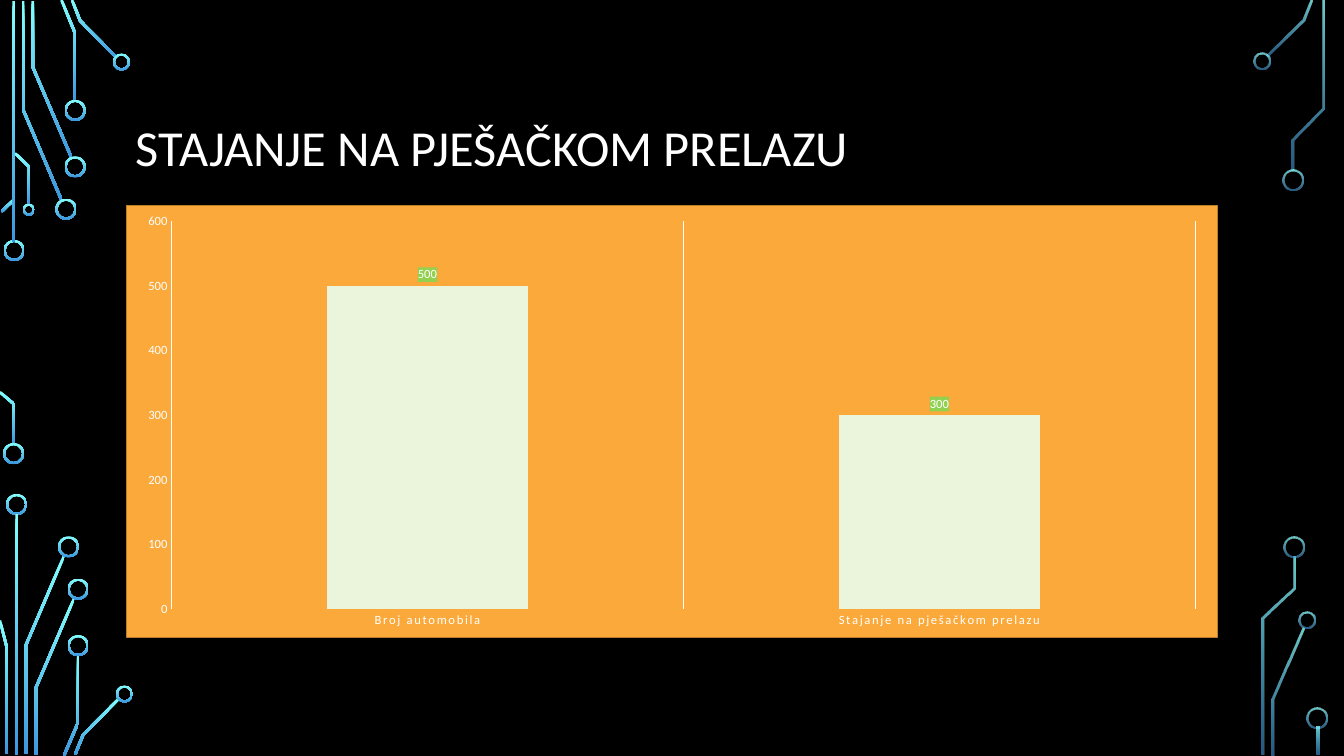
import math
import lxml.etree
import pptx
import pptx.chart.data
import pptx.dml.color
import pptx.enum.chart
import pptx.enum.shapes
import pptx.enum.text
import pptx.oxml
import pptx.oxml.ns
import pptx.util

COLUMNS, ROWS = 1333, 750
TRACE_WIDTH, RING_WIDTH = 2.6, 2
FONT, WHITE = "Calibri", "FFFFFF"
SOLID, FADED = (100, 100), (80, 60)

LEFT_TRACES = [
    [(23, 1), (23, 109), (61, 198.5)],
    [(32.5, 1), (32.5, 66.5), (71, 156.5)],
    [(61, 0), (74.5, 33), (74.5, 100)],
    [(71.5, 0), (79.5, 20.5), (115.5, 57)],
    [(1.5, 210), (14, 198)],
    [(0, 389), (14, 401), (14, 441)],
    [(15, 152), (29, 165.5), (29, 203)],
    [(25.5, 748), (25.5, 640.5), (63.5, 551.5)],
    [(0, 615.5), (6.5, 641), (6.5, 748)],
    [(35.5, 749), (35.5, 682.5), (73.5, 593.5)],
    [(63.5, 749.5), (77.5, 717), (77.5, 650)],
    [(74.5, 748.5), (82.5, 729), (118, 693)],
]
RIGHT_TRACES = [
    [(1300.5, 0), (1292.5, 20), (1257, 55.5)],
    [(1262.5, 749), (1262.5, 693.5), (1293, 623.5)],
    [(1312.5, 1), (1312.5, 107.5), (1282, 138.5), (1282, 169)],
    [(1252.5, 749), (1252.5, 613.5), (1283.5, 583.5), (1283.5, 552)],
]
# Rings: centre column, centre row, diameter
LEFT_RINGS = [
    (14, 248.5, 21), (13.5, 450, 21), (65.5, 207.5, 21), (74.5, 165.5, 21),
    (74.5, 109.5, 21), (120.5, 61.5, 17), (28.5, 208, 12), (16.5, 500.5, 21),
    (68, 542.5, 21), (77.5, 584.5, 21), (77.5, 640.5, 21), (123.5, 688.5, 17),
]
RIGHT_RINGS = [
    (1251.5, 60.5, 17), (1282.5, 178.5, 21), (1296.5, 615.5, 17),
    (1283, 542.5, 21), (1306.5, 712, 21),
]
# Bars: centre column, top row, height
LEFT_BARS = [(13.5, 1, 239), (16.5, 510, 239)]
RIGHT_BARS = [(1307.5, 721, 28)]


def color(hex_text):
    return pptx.dml.color.RGBColor.from_string(hex_text)


def apply(target, values):
    for name, value in values.items():
        setattr(target, name, value)


def style_font(font, size):
    apply(font, {"name": FONT, "size": pptx.util.Pt(size)})
    font.color.rgb = color(WHITE)


def paint(fill, hex_text):
    fill.solid()
    fill.fore_color.rgb = color(hex_text)


def descend(node, *tags):
    """First descendant reached by following the tags in turn."""
    for tag in tags:
        node = next(node.iter(pptx.oxml.ns.qn(tag)))
    return node


def chart_xml(body):
    tag, rest = body.split(">", 1)
    return pptx.oxml.parse_xml(
        f"{tag} {pptx.oxml.ns.nsdecls('c', 'a')}>{rest}")


def fill_xml(hex_text):
    return f'<a:solidFill><a:srgbClr val="{hex_text}"/></a:solidFill>'


def ribbon(points):
    """Outline of constant width around a centre line, with mitred bends."""
    angles = [math.atan2(y2 - y1, x2 - x1)
              for (x1, y1), (x2, y2) in zip(points, points[1:])]
    left, right = [], []
    for (x, y), before, after in zip(points, angles[:1] + angles,
                                     angles + angles[-1:]):
        middle = (before + after) / 2
        reach = TRACE_WIDTH / 2 / math.cos((after - before) / 2)
        dx, dy = -math.sin(middle) * reach, math.cos(middle) * reach
        left.append((x + dx, y + dy))
        right.append((x - dx, y - dy))
    return left + right[::-1]


class CircuitSlide:
    def __init__(self):
        self.deck = pptx.Presentation()
        apply(self.deck, {"slide_width": pptx.util.Inches(13.33),
                          "slide_height": pptx.util.Inches(7.5)})
        self.page = self.deck.slides.add_slide(self.deck.slide_layouts[6])
        paint(self.page.background.fill, "000000")

    def place(self, column, row):
        return (round(self.deck.slide_width * column / COLUMNS),
                round(self.deck.slide_height * row / ROWS))

    def area(self, column, row, width, height):
        return *self.place(column, row), *self.place(width, height)

    def glow(self, shape, opacities):
        shape.shadow.inherit = False
        shape.line.fill.background()
        shape.fill.gradient()
        shape.fill.gradient_angle = 270
        for stop, shade in zip(shape.fill.gradient_stops, ("82FFFF", "3D97DE")):
            stop.color.rgb = color(shade)
        tag = pptx.oxml.ns.qn("a:srgbClr")
        for node, opacity in zip(list(shape.element.spPr.iter(tag)), opacities):
            if opacity < 100:
                alpha = lxml.etree.SubElement(node, pptx.oxml.ns.qn("a:alpha"))
                alpha.set("val", str(opacity * 1000))

    def trace(self, points, opacities):
        corners = [self.place(*corner) for corner in ribbon(points)]
        builder = self.page.shapes.build_freeform(*corners[0])
        builder.add_line_segments(corners[1:])
        self.glow(builder.convert_to_shape(), opacities)

    def ring(self, column, row, size, opacities):
        shape = self.page.shapes.add_shape(
            pptx.enum.shapes.MSO_SHAPE.DONUT,
            *self.area(column - size / 2, row - size / 2, size, size))
        shape.adjustments[0] = RING_WIDTH / size
        self.glow(shape, opacities)

    def bar(self, column, row, height, opacities):
        shape = self.page.shapes.add_shape(
            pptx.enum.shapes.MSO_SHAPE.RECTANGLE,
            *self.area(column - TRACE_WIDTH / 2, row, TRACE_WIDTH, height))
        self.glow(shape, opacities)

    def title(self, text, *area):
        box = self.page.shapes.add_textbox(*self.area(*area))
        apply(box.text_frame, {
            "word_wrap": True,
            "vertical_anchor": pptx.enum.text.MSO_ANCHOR.MIDDLE})
        para = box.text_frame.paragraphs[0]
        para.line_spacing = 0.9
        span = para.add_run()
        span.text = text
        style_font(span.font, 36)

    def column_chart(self, values, *area):
        kinds = pptx.enum.chart
        data = pptx.chart.data.CategoryChartData()
        data.categories = list(values)
        data.add_series("Series 1", list(values.values()))
        chart = self.page.shapes.add_chart(
            kinds.XL_CHART_TYPE.COLUMN_CLUSTERED, *self.area(*area), data).chart
        apply(chart, {"has_title": False, "has_legend": False})
        style_font(chart.font, 10)
        apply(chart.plots[0], {"gap_width": 154, "vary_by_categories": False})

        for axis in (chart.category_axis, chart.value_axis):
            apply(axis, {"major_tick_mark": kinds.XL_TICK_MARK.NONE,
                         "minor_tick_mark": kinds.XL_TICK_MARK.NONE})
            style_font(axis.tick_labels.font, 9)
            axis.format.line.fill.background()
        apply(chart.value_axis, {"has_major_gridlines": False, "major_unit": 100,
                                 "minimum_scale": 0, "maximum_scale": 600})
        chart.category_axis.has_major_gridlines = True
        grid = chart.category_axis.major_gridlines.format.line
        grid.width = pptx.util.Pt(0.75)
        paint(grid.fill, WHITE)
        descend(chart.element, "c:catAx", "a:defRPr").set("spc", "120")

        series = chart.plots[0].series[0]
        paint(series.format.fill, "EBF5DB")
        labels = series.data_labels
        apply(labels, {"show_value": True,
                       "position": kinds.XL_LABEL_POSITION.OUTSIDE_END})
        style_font(labels.font, 9)
        descend(chart.element, "c:dLbls", "c:txPr").addprevious(
            chart_xml(f"<c:spPr>{fill_xml('92D050')}</c:spPr>"))

        descend(chart.element, "c:chart").addnext(chart_xml(
            f'<c:spPr>{fill_xml("FAA93A")}<a:ln w="12700">'
            f'{fill_xml("B97D2B")}</a:ln></c:spPr>'))
        plot_area = descend(chart.element, "c:plotArea")
        for layout in plot_area.findall(pptx.oxml.ns.qn("c:layout")):
            plot_area.remove(layout)
        frame = {"layoutTarget": "inner", "xMode": "edge", "yMode": "edge",
                 "x": 0.041, "y": 0.037, "w": 0.939, "h": 0.898}
        parts = "".join(f'<c:{key} val="{value}"/>' for key, value in frame.items())
        plot_area.insert(0, chart_xml(
            f"<c:layout><c:manualLayout>{parts}</c:manualLayout></c:layout>"))


def main():
    slide = CircuitSlide()
    for traces, rings, bars, opacities in (
            (LEFT_TRACES, LEFT_RINGS, LEFT_BARS, SOLID),
            (RIGHT_TRACES, RIGHT_RINGS, RIGHT_BARS, FADED)):
        for points in traces:
            slide.trace(points, opacities)
        for ring in rings:
            slide.ring(*ring, opacities)
        for bar in bars:
            slide.bar(*bar, opacities)
    slide.title("STAJANJE NA PJEŠAČKOM PRELAZU", 125, 68, 1083, 162)
    slide.column_chart({"Broj automobila": 500,
                        "Stajanje na pješačkom prelazu": 300}, 125, 203, 1083, 430)
    slide.deck.save("out.pptx")


if __name__ == "__main__":
    main()
